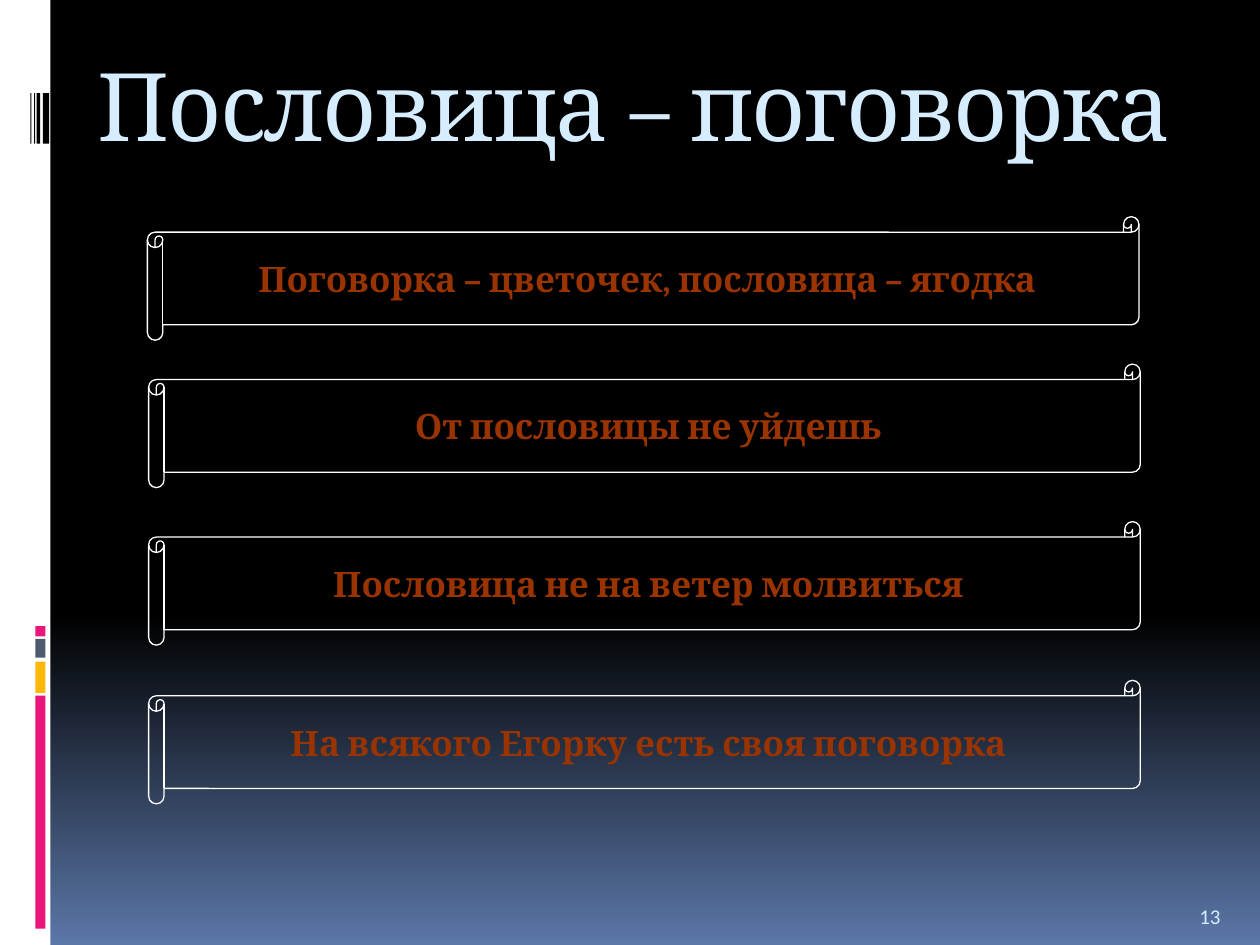
import pptx
import pptx.util
from pptx.dml.color import RGBColor
from pptx.enum.shapes import MSO_SHAPE
from pptx.enum.text import MSO_ANCHOR, PP_ALIGN
from pptx.util import Inches

COLORS = {
    "black": "000000",
    "white": "FFFFFF",
    "blue": "5B77A8",
    "pink": "EA157A",
    "amber": "FEB80A",
    "slate": "4E5B6F",
    "pale": "D6ECFF",
    "rust": "993300",
}

SIDE_BARS = [
    (0, 0, 0.4, 7.5, "white"),
    (0.28, 5.52, 0.08, 1.85, "pink"),
    (0.28, 5.25, 0.08, 0.25, "amber"),
    (0.28, 5.07, 0.08, 0.15, "slate"),
    (0.28, 4.97, 0.08, 0.08, "pink"),
    (0.34, 0.74, 0.05, 0.4, "black"),
    (0.29, 0.74, 0.03, 0.4, "black"),
    (0.27, 0.74, 0.01, 0.4, "black"),
    (0.24, 0.74, 0.01, 0.4, "black"),
]

PROVERBS = [
    (1.17, 1.72, "Поговорка – цветочек, пословица – ягодка"),
    (1.18, 2.89, "От пословицы не уйдешь"),
    (1.18, 4.14, "Пословица не на ветер молвиться"),
    (1.18, 5.4, "На всякого Егорку есть своя поговорка"),
]


def color(name):
    return RGBColor.from_string(COLORS[name])


def set_font(paragraph, name, size, color_name, bold=False):
    paragraph.font.name = name
    paragraph.font.size = pptx.util.Pt(size)
    paragraph.font.color.rgb = color(color_name)
    paragraph.font.bold = bold


def set_background(slide):
    fill = slide.background.fill
    fill.gradient()
    fill.gradient_angle = 270
    for stop, position, name in zip(fill.gradient_stops, (0.65, 1), ("black", "blue")):
        stop.position = position
        stop.color.rgb = color(name)


def add_bar(slide, left, top, width, height, color_name):
    shape = slide.shapes.add_shape(
        MSO_SHAPE.RECTANGLE, Inches(left), Inches(top), Inches(width), Inches(height)
    )
    shape.shadow.inherit = False
    shape.fill.solid()
    shape.fill.fore_color.rgb = color(color_name)
    shape.line.fill.background()


def set_title(slide, text):
    title = slide.shapes.title
    title.left, title.top = Inches(0.67), Inches(0.37)
    title.width, title.height = Inches(8.75), Inches(1.33)
    frame = title.text_frame
    frame.text = text
    frame.vertical_anchor = MSO_ANCHOR.TOP
    frame.margin_top = 0
    paragraph = frame.paragraphs[0]
    paragraph.alignment = PP_ALIGN.LEFT
    set_font(paragraph, "Cambria", 54, "pale")
    paragraph.runs[0].font._element.set("spc", "-100")


def add_page_number(slide, text):
    box = slide.shapes.add_textbox(Inches(9.42), Inches(7.02), Inches(0.5), Inches(0.4))
    frame = box.text_frame
    frame.word_wrap = True
    frame.vertical_anchor = MSO_ANCHOR.BOTTOM
    frame.text = text
    set_font(frame.paragraphs[0], "Calibri", 12, "pale")


def add_scroll(slide, left, top, text):
    shape = slide.shapes.add_shape(
        MSO_SHAPE.HORIZONTAL_SCROLL, Inches(left), Inches(top), Inches(7.87), Inches(0.98)
    )
    shape.shadow.inherit = False
    shape.fill.background()
    shape.line.color.rgb = color("white")
    shape.line.width = pptx.util.Pt(0.75)
    frame = shape.text_frame
    frame.word_wrap = False
    frame.vertical_anchor = MSO_ANCHOR.MIDDLE
    frame.text = text
    paragraph = frame.paragraphs[0]
    paragraph.alignment = PP_ALIGN.CENTER
    set_font(paragraph, "Cambria", 20, "rust", bold=True)


def main():
    presentation = pptx.Presentation()
    presentation.slide_width = Inches(10)
    presentation.slide_height = Inches(7.5)
    slide = presentation.slides.add_slide(presentation.slide_layouts[5])
    set_background(slide)
    for bar in SIDE_BARS:
        add_bar(slide, *bar)
    set_title(slide, "Пословица – поговорка")
    add_page_number(slide, "13")
    for proverb in PROVERBS:
        add_scroll(slide, *proverb)
    presentation.save("out.pptx")


if __name__ == "__main__":
    main()
